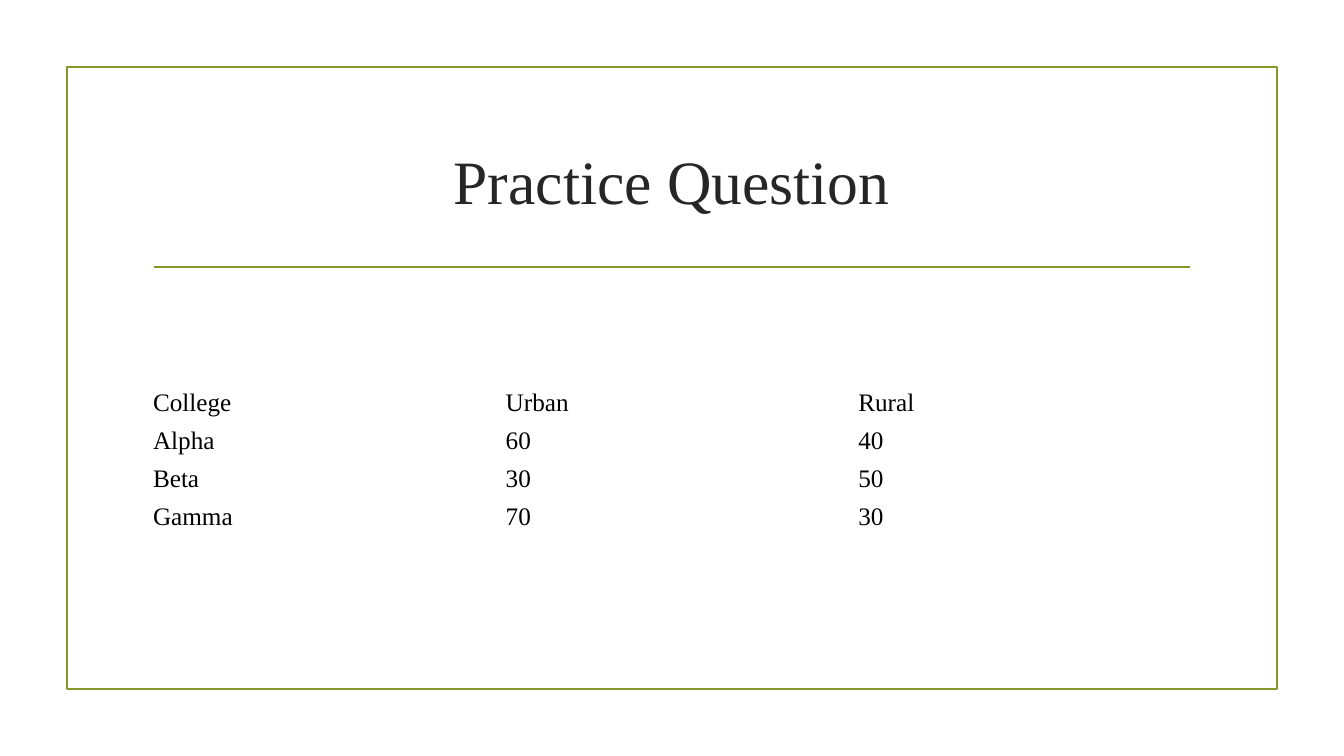
from lxml import etree
from pptx import Presentation
from pptx import util as u
from pptx.dml.color import RGBColor
from pptx.enum import shapes, text
from pptx.oxml.ns import qn

OLIVE = RGBColor(0x83, 0x99, 0x2A)
CHARCOAL = RGBColor(0x26, 0x26, 0x26)
BLACK = RGBColor(0, 0, 0)
FONT = "Times New Roman"
WIDTH, HEIGHT = 1344, 756
EMU_PER_PX = 914400 / 100.8

COLLEGES = [
    ("College", "Urban", "Rural"),
    ("Alpha", "60", "40"),
    ("Beta", "30", "50"),
    ("Gamma", "70", "30"),
]


def px(*lengths):
    return [u.Emu(round(length * EMU_PER_PX)) for length in lengths]


def write(frame, wording, size=18, color=BLACK, align=text.PP_ALIGN.LEFT):
    frame.word_wrap = True
    paragraph = frame.paragraphs[0]
    paragraph.alignment = align
    run = paragraph.add_run()
    run.text = wording
    run.font.name = FONT
    run.font.size = u.Pt(size)
    run.font.bold = False
    run.font.color.rgb = color


class Deck:
    """Holds the olive line style and the current slide."""

    def __init__(self, accent=OLIVE, weight=1.25):
        self.accent, self.weight = accent, weight
        self.presentation = Presentation()
        self.presentation.slide_width, self.presentation.slide_height = px(WIDTH, HEIGHT)
        self.slide = self.presentation.slides.add_slide(self.presentation.slide_layouts[6])

    def stroke(self, line):
        line.color.rgb = self.accent
        line.width = u.Pt(self.weight)

    def frame(self, left, top, width, height):
        border = self.slide.shapes.add_shape(
            shapes.MSO_SHAPE.RECTANGLE, *px(left, top, width, height))
        border.shadow.inherit = False
        border.fill.background()
        self.stroke(border.line)

    def rule(self, left, right, y):
        divider = self.slide.shapes.add_connector(
            shapes.MSO_CONNECTOR.STRAIGHT, *px(left, y, right, y))
        self.stroke(divider.line)
        etree.SubElement(divider._element.spPr, qn("a:effectLst"))

    def heading(self, wording, left, top, width, height):
        title = self.slide.shapes.add_textbox(*px(left, top, width, height)).text_frame
        title.vertical_anchor = text.MSO_ANCHOR.MIDDLE
        write(title, wording, size=44, color=CHARCOAL, align=text.PP_ALIGN.CENTER)

    def table(self, rows, left, top, width, row_height):
        grid = self.slide.shapes.add_table(
            len(rows), len(rows[0]), *px(left, top, width, row_height * len(rows))).table
        grid.first_row = grid.horz_banding = False
        for r, row in enumerate(rows):
            for c, wording in enumerate(row):
                cell = grid.cell(r, c)
                cell.fill.background()
                cell.margin_top = cell.margin_bottom = 0
                cell.vertical_anchor = text.MSO_ANCHOR.MIDDLE
                write(cell.text_frame, wording)


def main():
    deck = Deck()
    deck.frame(67, 67, 1210, 622)
    deck.rule(154, 1190, 267)
    deck.heading("Practice Question", 143, 108, 1058, 144)
    deck.table(COLLEGES, 143, 384, 1058, 38)
    deck.presentation.save("out.pptx")


if __name__ == "__main__":
    main()
